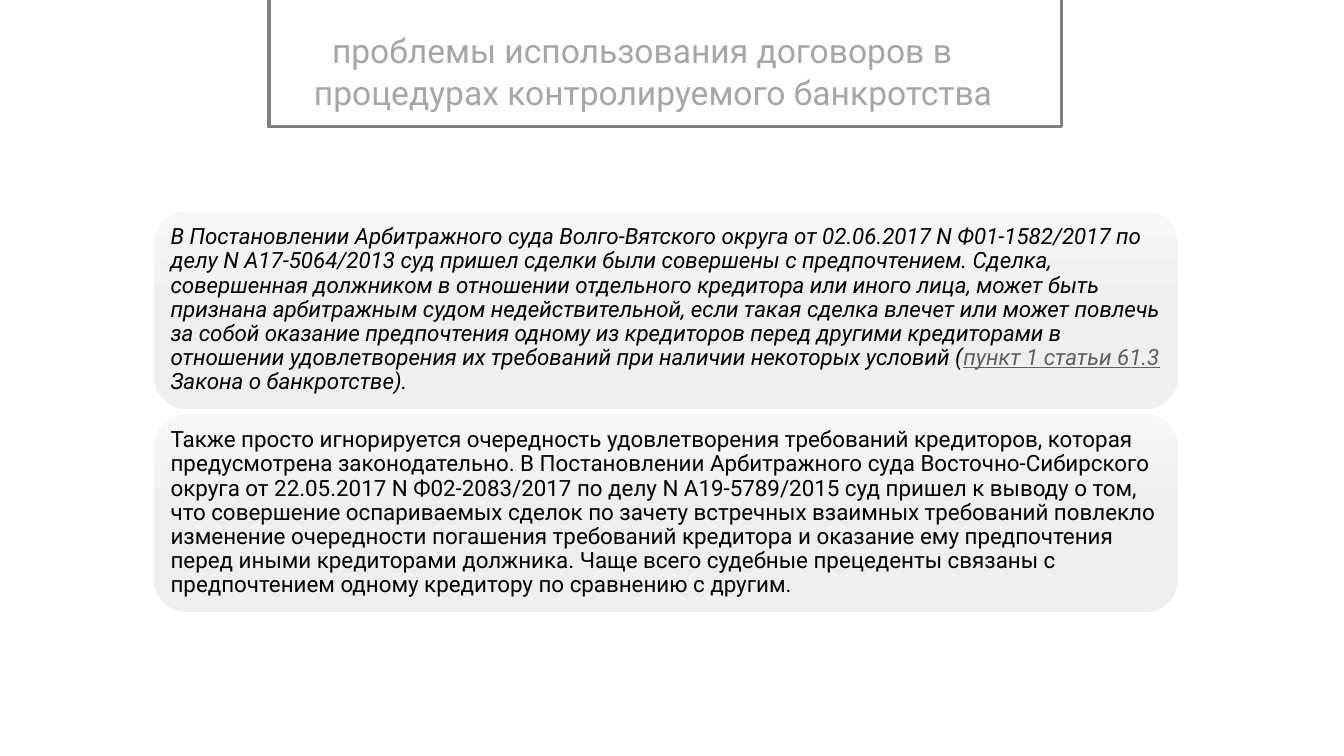
from copy import deepcopy
from dataclasses import dataclass

from pptx import Presentation
from pptx import util as u
from pptx.dml.color import RGBColor
from pptx.enum import shapes, text


@dataclass(frozen=True)
class Theme:
    font: str = "Roboto"
    title_size: int = 24
    body_size: int = 16
    title: str = "A6A6A6"
    body: str = "000000"
    link: str = "5F5F5F"
    frame: str = "808080"
    frame_width: float = 2.25
    panel: tuple = ((0, "F7F7F7"), (0.5, "EFEFEF"), (1, "EDEDED"))


THEME = Theme()
PX = 914400 / 100.8
SLIDE_SIZE = (1344, 756)

TITLE = "проблемы использования договоров в процедурах контролируемого банкротства"
PREFERENCE = [
    ("В Постановлении Арбитражного суда Волго-Вятского округа от 02.06.2017 N Ф01-1582/2017 "
     "по делу N А17-5064/2013 суд пришел сделки были совершены с предпочтением. Сделка, "
     "совершенная должником в отношении отдельного кредитора или иного лица, может быть "
     "признана арбитражным судом недействительной, если такая сделка влечет или может "
     "повлечь за собой оказание предпочтения одному из кредиторов перед другими кредиторами "
     "в отношении удовлетворения их требований при наличии некоторых условий (",
     {"italic": True}),
    ("пункт 1 статьи 61.3", {"italic": True, "underline": True, "color": THEME.link}),
    (" Закона о банкротстве).", {"italic": True}),
]
PRIORITY = [
    ("Также просто игнорируется очередность удовлетворения требований кредиторов, которая "
     "предусмотрена законодательно. В Постановлении Арбитражного суда Восточно-Сибирского "
     "округа от 22.05.2017 N Ф02-2083/2017 по делу N А19-5789/2015 суд пришел к выводу о том, "
     "что совершение оспариваемых сделок по зачету встречных взаимных требований повлекло "
     "изменение очередности погашения требований кредитора и оказание ему предпочтения "
     "перед иными кредиторами должника. Чаще всего судебные прецеденты связаны с "
     "предпочтением одному кредитору по сравнению с другим.", {}),
]


def px(n):
    return u.Emu(round(n * PX))


def apply(target, values):
    for name, value in values.items():
        setattr(target, name, value)


def write(sp, runs, size, color, spacing, inset):
    tf = sp.text_frame
    margins = {f"margin_{side}": px(inset) for side in ("left", "top", "right", "bottom")}
    apply(tf, {"word_wrap": True, "vertical_anchor": text.MSO_ANCHOR.MIDDLE, **margins})
    p = tf.paragraphs[0]
    apply(p, {"alignment": text.PP_ALIGN.LEFT, "line_spacing": spacing})
    for words, style in runs:
        r = p.add_run()
        r.text = words
        font = {"name": THEME.font, "size": u.Pt(size), **style}
        r.font.color.rgb = RGBColor.from_string(font.pop("color", color))
        apply(r.font, font)
    return p


def add_title(s, x, y, w, h):
    box = s.shapes.add_textbox(px(x + 35), px(y + 17), px(w - 41), px(h - 11))
    p = write(box, [(TITLE, {})], THEME.title_size, THEME.title, 1.05, 10)
    p._p.get_or_add_pPr().set("indent", str(px(18)))
    frame = s.shapes.add_shape(shapes.MSO_SHAPE.RECTANGLE, px(x), px(y), px(w), px(h))
    frame.shadow.inherit = False
    frame.fill.background()
    frame.line.color.rgb = RGBColor.from_string(THEME.frame)
    frame.line.width = u.Pt(THEME.frame_width)


def add_panel(s, runs, x, y, w, h):
    sp = s.shapes.add_shape(shapes.MSO_SHAPE.ROUNDED_RECTANGLE, px(x), px(y), px(w), px(h))
    sp.shadow.inherit = False
    sp.line.fill.background()
    sp.fill.gradient()
    sp.fill.gradient_angle = 270
    first = sp.fill._xPr.gradFill.gsLst[0]
    first.addnext(deepcopy(first))
    for stop, (position, color) in zip(sp.fill.gradient_stops, THEME.panel):
        stop.position = position
        stop.color.rgb = RGBColor.from_string(color)
    write(sp, runs, THEME.body_size, THEME.body, 0.9, 7)


def add_panels(s, x, y, w, h, gap, panels):
    panel_h = (h - gap * (len(panels) - 1)) / len(panels)
    for i, runs in enumerate(panels):
        add_panel(s, runs, x, y + i * (panel_h + gap), w, panel_h)


def main():
    prs = Presentation()
    prs.slide_width, prs.slide_height = map(px, SLIDE_SIZE)
    s = prs.slides.add_slide(prs.slide_layouts[6])
    add_title(s, 269, -10, 793, 137)
    add_panels(s, 154, 211, 1024, 401, 5, [PREFERENCE, PRIORITY])
    prs.save("out.pptx")


if __name__ == "__main__":
    main()
